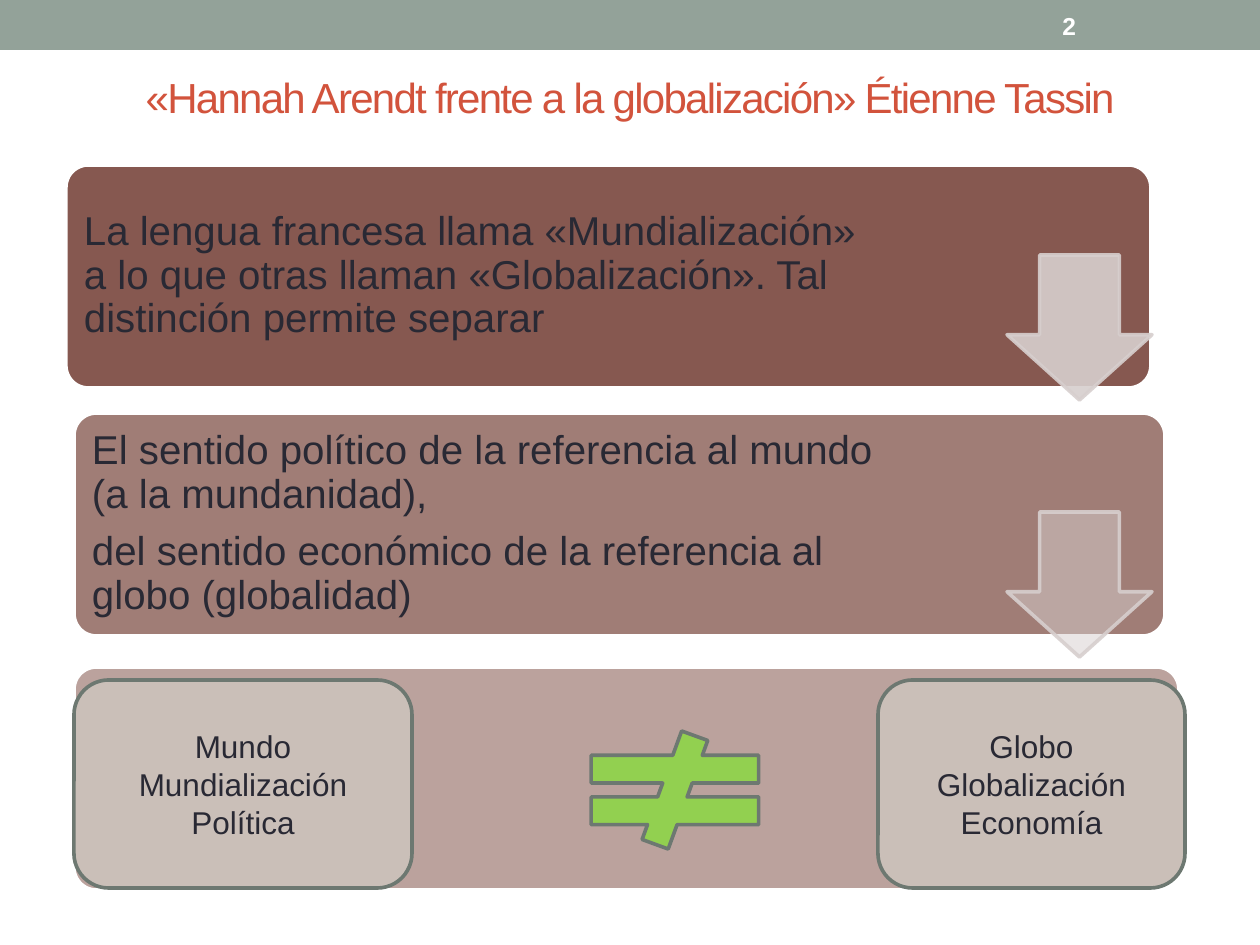
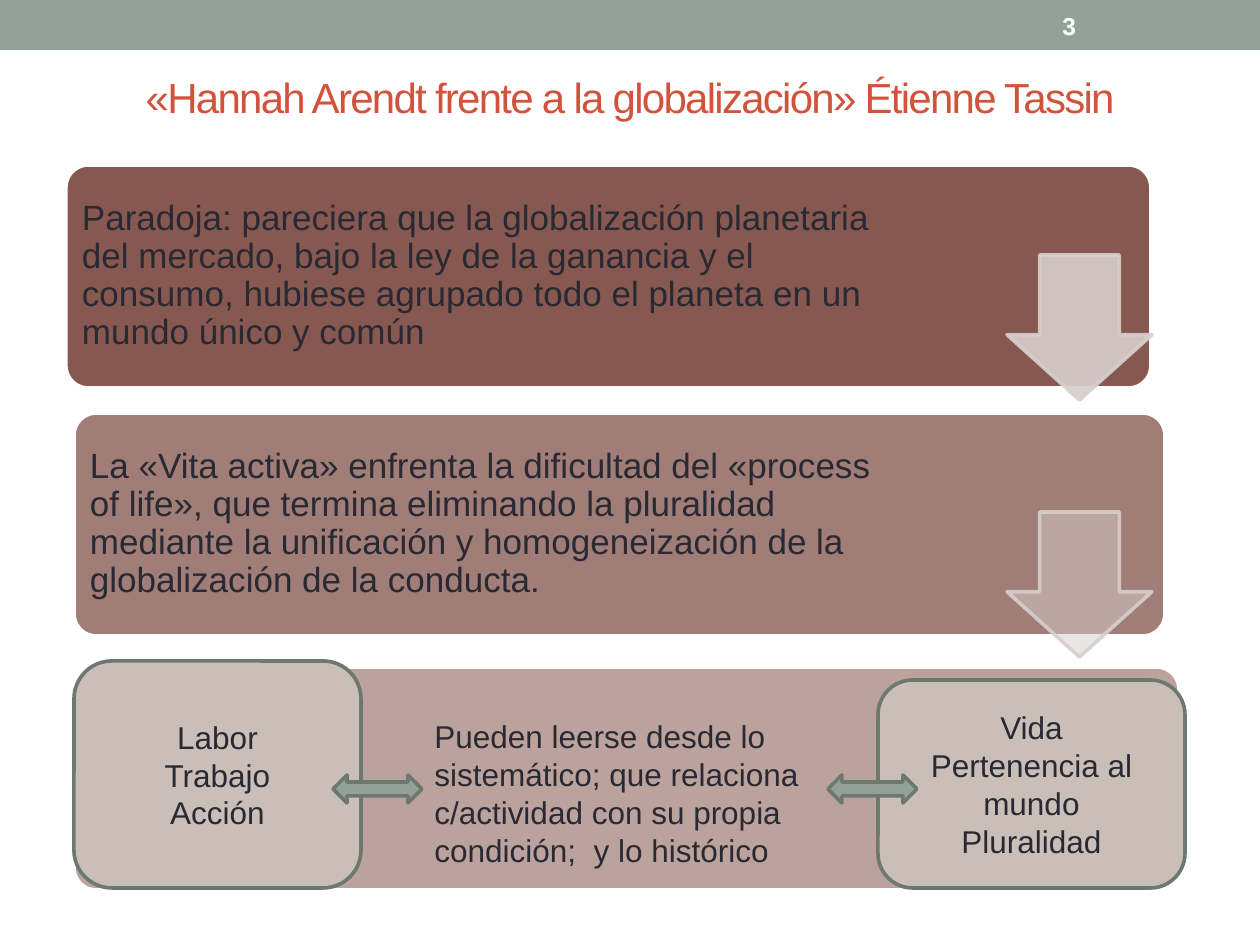
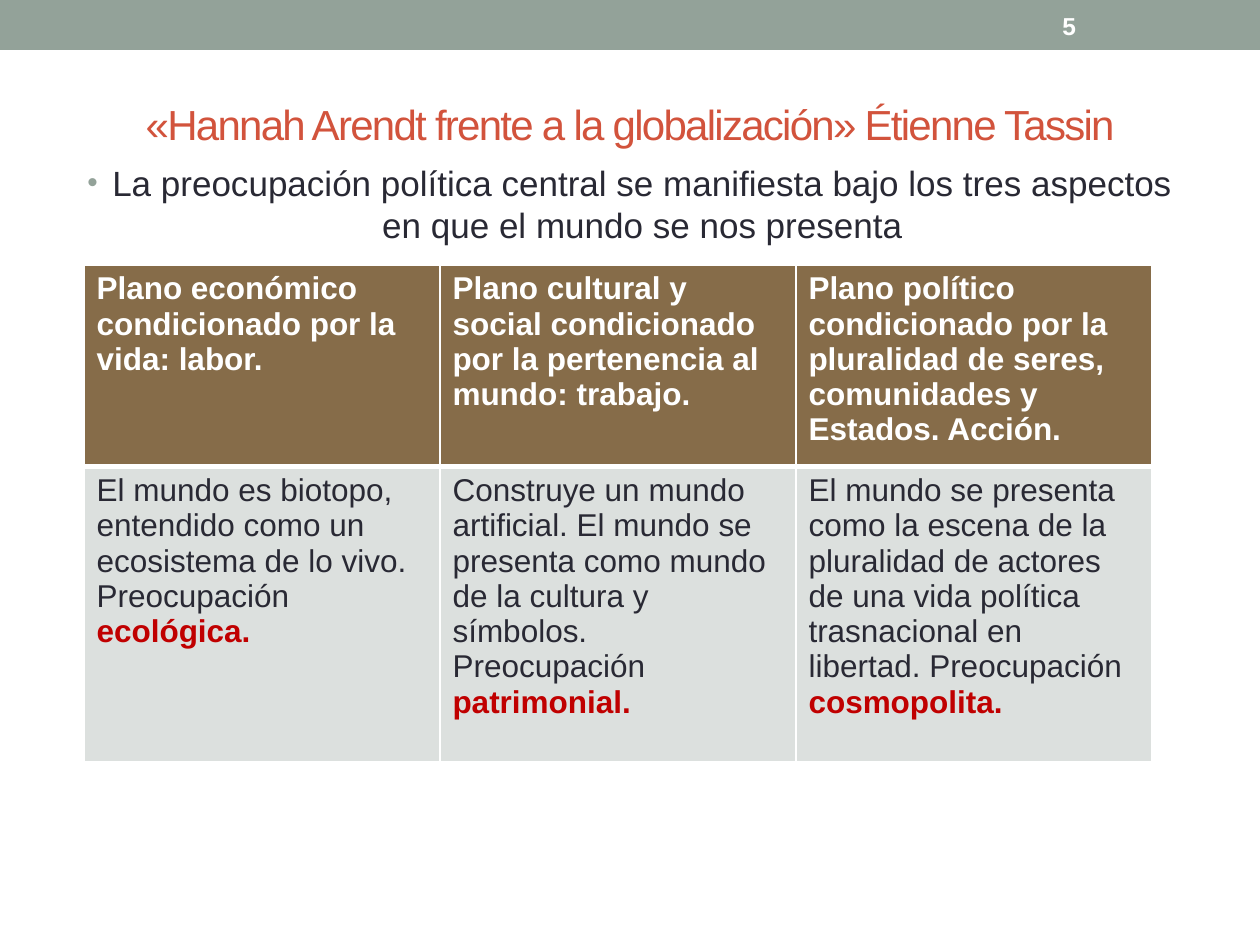
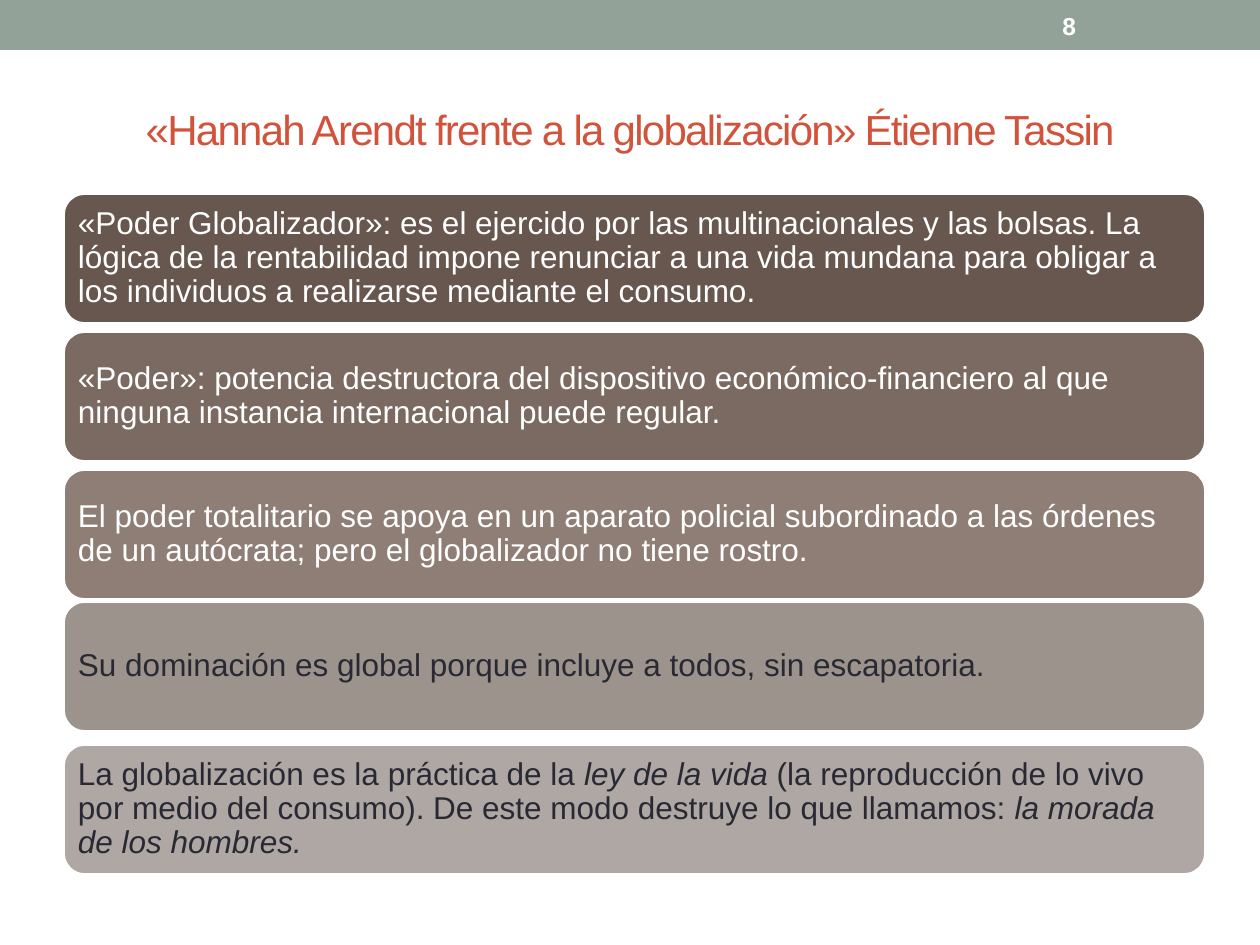
from dataclasses import dataclass

from lxml.etree import SubElement
from pptx import Presentation
from pptx.dml.color import RGBColor
from pptx.enum.shapes import MSO_SHAPE
from pptx.enum.text import MSO_ANCHOR, PP_ALIGN
from pptx.oxml.ns import qn
from pptx.util import Emu, Pt

EMU_PER_PX = 914400 / 126
TITLE_ONLY, TITLE_AND_BODY = 5, 1
TITLE = "«Hannah Arendt frente a la globalización» Étienne Tassin"


@dataclass(frozen=True)
class Theme:
    font: str = "Arial"
    sage: str = "93A299"
    outline: str = "6D7871"
    title: str = "D2533C"
    ink: str = "292934"
    white: str = "FFFFFF"
    step: str = "79463D"
    arrow: str = "D7CFCE"
    card: str = "CABFB8"
    green: str = "92D050"
    table_head: str = "866C49"
    table_body: str = "DCE0DE"
    accent: str = "C00000"
    title_size: int = 24
    number_size: int = 14
    large_size: int = 23
    medium_size: int = 20
    text_size: int = 18
    line_width: float = 2.08


T = Theme()


def px(n):
    return Emu(round(n * EMU_PER_PX))


def box(left, top, width, height):
    return px(left), px(top), px(width), px(height)


def place(sp, area):
    sp.left, sp.top, sp.width, sp.height = box(*area)


def set_alpha(fill, percent):
    """Make a solid fill or line fill partly transparent."""
    color = fill._xPr.find(qn("a:solidFill"))[0]
    SubElement(color, qn("a:alpha"), val=str(percent * 1000))


def style_run(r, size, color, bold=False, italic=False):
    r.font.name = T.font
    r.font.size = Pt(size)
    r.font.bold = bold
    r.font.italic = italic
    r.font.color.rgb = RGBColor.from_string(color)


def write(tf, paragraphs, size=T.text_size, color=T.ink, align=PP_ALIGN.LEFT,
          bold=False, emphasis=None):
    """Fill a text frame; parts between asterisks take the emphasis style."""
    tf.word_wrap = True
    for i, text in enumerate(paragraphs):
        p = tf.paragraphs[0] if i == 0 else tf.add_paragraph()
        p.alignment = align
        for j, part in enumerate(text.split("*")):
            if part:
                r = p.add_run()
                r.text = part
                style = {"color": color, "bold": bold}
                if j % 2:
                    style.update(emphasis)
                style_run(r, size, **style)


def add_shape(s, kind, area, fill, line=None, alpha=None, line_alpha=None, adj=()):
    sp = s.shapes.add_shape(kind, *box(*area))
    sp.shadow.inherit = False
    sp.fill.solid()
    sp.fill.fore_color.rgb = RGBColor.from_string(fill)
    if alpha:
        set_alpha(sp.fill, alpha)
    if line:
        sp.line.width = Pt(T.line_width)
        sp.line.color.rgb = RGBColor.from_string(line)
        if line_alpha:
            set_alpha(sp.line.fill, line_alpha)
    else:
        sp.line.fill.background()
    for i, value in enumerate(adj):
        sp.adjustments[i] = value
    return sp


def add_text(s, area, paragraphs, anchor=MSO_ANCHOR.TOP, inset=None, **style):
    tf = s.shapes.add_textbox(*box(*area)).text_frame
    tf.vertical_anchor = anchor
    if inset is not None:
        tf.margin_left = tf.margin_right = tf.margin_top = tf.margin_bottom = px(inset)
    write(tf, paragraphs, **style)
    return tf


def add_panel_text(s, area, paragraphs, inset, size, **style):
    tf = add_text(s, area, paragraphs, MSO_ANCHOR.MIDDLE, inset, size=size, **style)
    for p in tf.paragraphs:
        p.line_spacing = 0.9
        p.space_after = Pt(round(size * 0.35))


def add_card(s, area, lines):
    sp = add_shape(s, MSO_SHAPE.ROUNDED_RECTANGLE, area, T.card, T.outline)
    sp.text_frame.vertical_anchor = MSO_ANCHOR.MIDDLE
    write(sp.text_frame, lines, align=PP_ALIGN.CENTER)


def add_master_band(prs, s):
    """Move a top band from the slide to the master, behind everything else."""
    band = add_shape(s, MSO_SHAPE.RECTANGLE, (0, 0, 1260, 50), T.sage)
    band.element.nvSpPr.cNvPr.set("id", "99")
    prs.slide_master.shapes.element.insert(2, band.element)


def add_slide(prs, layout, number, title_top, title_height):
    s = prs.slides.add_slide(prs.slide_layouts[layout])
    place(s.shapes.title, (63, title_top, 1134, title_height))
    tf = s.shapes.title.text_frame
    tf.vertical_anchor = MSO_ANCHOR.MIDDLE
    write(tf, [TITLE], T.title_size, T.title, PP_ALIGN.CENTER)
    tf.paragraphs[0].runs[0].font._element.set("spc", "-100")
    add_text(s, (1050, 3, 147, 45), [str(number)], MSO_ANCHOR.MIDDLE,
             size=T.number_size, color=T.white, bold=True)
    return s


def add_steps(s, texts, size, inset):
    """Draw three fading panels, text in the first two, and the arrows between."""
    panels = [(66, 165, 1085, 90), (74, 413, 1091, 70), (74, 667, 1105, 50)]
    for i, (left, top, width, alpha) in enumerate(panels):
        add_shape(s, MSO_SHAPE.ROUNDED_RECTANGLE, (left, top, width, 223),
                  T.step, T.white, alpha, adj=[0.1])
        if i < len(texts):
            add_panel_text(s, (left + 6, top + 6, 820, 210), texts[i], inset, size)
    for top, alpha in ((255, 90), (512, 50)):
        add_shape(s, MSO_SHAPE.DOWN_ARROW, (1007, top, 145, 145), T.arrow, T.arrow,
                  alpha, line_alpha=90, adj=[0.55, 0.45])


def add_bullet(p):
    pPr = p._p.get_or_add_pPr()
    pPr.set("marL", str(px(25)))
    pPr.set("indent", str(px(-25)))
    SubElement(SubElement(pPr, qn("a:buClr")), qn("a:srgbClr"), val=T.sage)
    SubElement(pPr, qn("a:buSzPct"), val="85000")
    SubElement(pPr, qn("a:buFont"), typeface=T.font)
    SubElement(pPr, qn("a:buChar"), char="•")


def set_borders(cell, **widths):
    tcPr = cell._tc.get_or_add_tcPr()
    for side in "LRTB":
        ln = SubElement(tcPr, qn(f"a:ln{side}"), w=str(Pt(widths.get(side, 1))))
        SubElement(SubElement(ln, qn("a:solidFill")), qn("a:srgbClr"), val=T.white)


def add_plan_table(s, header, body):
    heights = (187, 295)
    table = s.shapes.add_table(2, len(header), *box(84, 265, 1068, sum(heights))).table
    looks = [(header, T.table_head, T.white, True, {"B": 3}),
             (body, T.table_body, T.ink, False, {"T": 3})]
    for i, (texts, fill, color, bold, borders) in enumerate(looks):
        table.rows[i].height = px(heights[i])
        for j, text in enumerate(texts):
            cell = table.cell(i, j)
            set_borders(cell, **borders)
            cell.fill.solid()
            cell.fill.fore_color.rgb = RGBColor.from_string(fill)
            write(cell.text_frame, [text], color=color, bold=bold,
                  emphasis={"color": T.accent, "bold": True})


def world_and_globe(prs):
    s = add_slide(prs, TITLE_ONLY, 2, 38, 117)
    add_master_band(prs, s)
    add_steps(s, [
        ["La lengua francesa llama «Mundialización» a lo que otras llaman "
         "«Globalización». Tal distinción permite separar"],
        ["El sentido político de la referencia al mundo (a la mundanidad),",
         "del sentido económico de la referencia al globo (globalidad)"],
    ], T.large_size, 12)
    add_shape(s, MSO_SHAPE.MATH_NOT_EQUAL, (561, 731, 228, 118), T.green, T.outline)
    add_card(s, (878, 680, 307, 208), ["Globo", "Globalización", "Economía"])
    add_card(s, (74, 680, 338, 208), ["Mundo", "Mundialización", "Política"])


def paradox(prs):
    s = add_slide(prs, TITLE_ONLY, 3, 38, 117)
    add_steps(s, [
        ["Paradoja: pareciera que la globalización planetaria del mercado, bajo la ley "
         "de la ganancia y el consumo, hubiese agrupado todo el planeta en un mundo "
         "único y común"],
        ["La «Vita activa» enfrenta la dificultad del «process of life», que termina "
         "eliminando la pluralidad mediante la unificación y homogeneización de la "
         "globalización de la conducta."],
    ], T.medium_size, 10)
    add_card(s, (878, 680, 307, 208), ["Vida", "Pertenencia al mundo", "Pluralidad"])
    add_card(s, (74, 661, 287, 227), ["Labor", "Trabajo", "Acción"])
    add_text(s, (422, 711, 427, 165),
             ["Pueden leerse desde lo sistemático; que relaciona c/actividad con su "
              "propia condición;  y lo histórico"])
    for left in (333, 828):
        add_shape(s, MSO_SHAPE.LEFT_RIGHT_ARROW, (left, 775, 89, 28), T.sage, T.outline)


def three_planes(prs):
    s = add_slide(prs, TITLE_AND_BODY, 5, 73, 101)
    body = s.placeholders[1]
    place(body, (63, 155, 1134, 737))
    write(body.text_frame,
          ["La preocupación política central se manifiesta bajo los tres aspectos en "
           "que el mundo se nos presenta"], T.medium_size, align=PP_ALIGN.CENTER)
    p = body.text_frame.paragraphs[0]
    p.space_before = Pt(4)
    add_bullet(p)
    add_plan_table(s, [
        "Plano económico condicionado por la vida: labor.",
        "Plano cultural y social condicionado por la pertenencia al mundo: trabajo.",
        "Plano político condicionado por la pluralidad de seres, comunidades y "
        "Estados. Acción.",
    ], [
        "El mundo es biotopo, entendido como un ecosistema de lo vivo. Preocupación "
        "*ecológica.*",
        "Construye un mundo artificial. El mundo se presenta como mundo de la cultura "
        "y símbolos. Preocupación *patrimonial.*",
        "El mundo se presenta como la escena de la pluralidad de actores de una vida "
        "política trasnacional en libertad. Preocupación *cosmopolita.*",
    ])


def globalizing_power(prs):
    s = add_slide(prs, TITLE_ONLY, 8, 73, 111)
    rows = [
        (193, "67574E", T.white,
         "«Poder Globalizador»: es el ejercido por las multinacionales y las bolsas. La "
         "lógica de la rentabilidad impone renunciar a una vida mundana para obligar a "
         "los individuos a realizarse mediante el consumo."),
        (331, "7B6A61", T.white,
         "«Poder»: potencia destructora del dispositivo económico-financiero al que "
         "ninguna instancia internacional puede regular."),
        (469, "8E7E75", T.white,
         "El poder totalitario se apoya en un aparato policial subordinado a las "
         "órdenes de un autócrata; pero el globalizador no tiene rostro."),
        (601, "9D938D", T.ink,
         "Su dominación es global porque incluye a todos, sin escapatoria."),
        (744, "AEA7A4", T.ink,
         "La globalización es la práctica de la *ley de la vida *(la reproducción de lo "
         "vivo por medio del consumo). De este modo destruye lo que llamamos: *la "
         "morada de los hombres.*"),
    ]
    for top, fill, color, text in rows:
        add_shape(s, MSO_SHAPE.ROUNDED_RECTANGLE, (63, top, 1143, 131), fill, T.white)
        add_panel_text(s, (69, top + 6, 1130, 118), [text], 9, T.text_size,
                       color=color, emphasis={"italic": True})


def main():
    prs = Presentation()
    prs.slide_width, prs.slide_height = px(1260), px(945)
    world_and_globe(prs)
    paradox(prs)
    three_planes(prs)
    globalizing_power(prs)
    prs.save("out.pptx")


if __name__ == "__main__":
    main()
